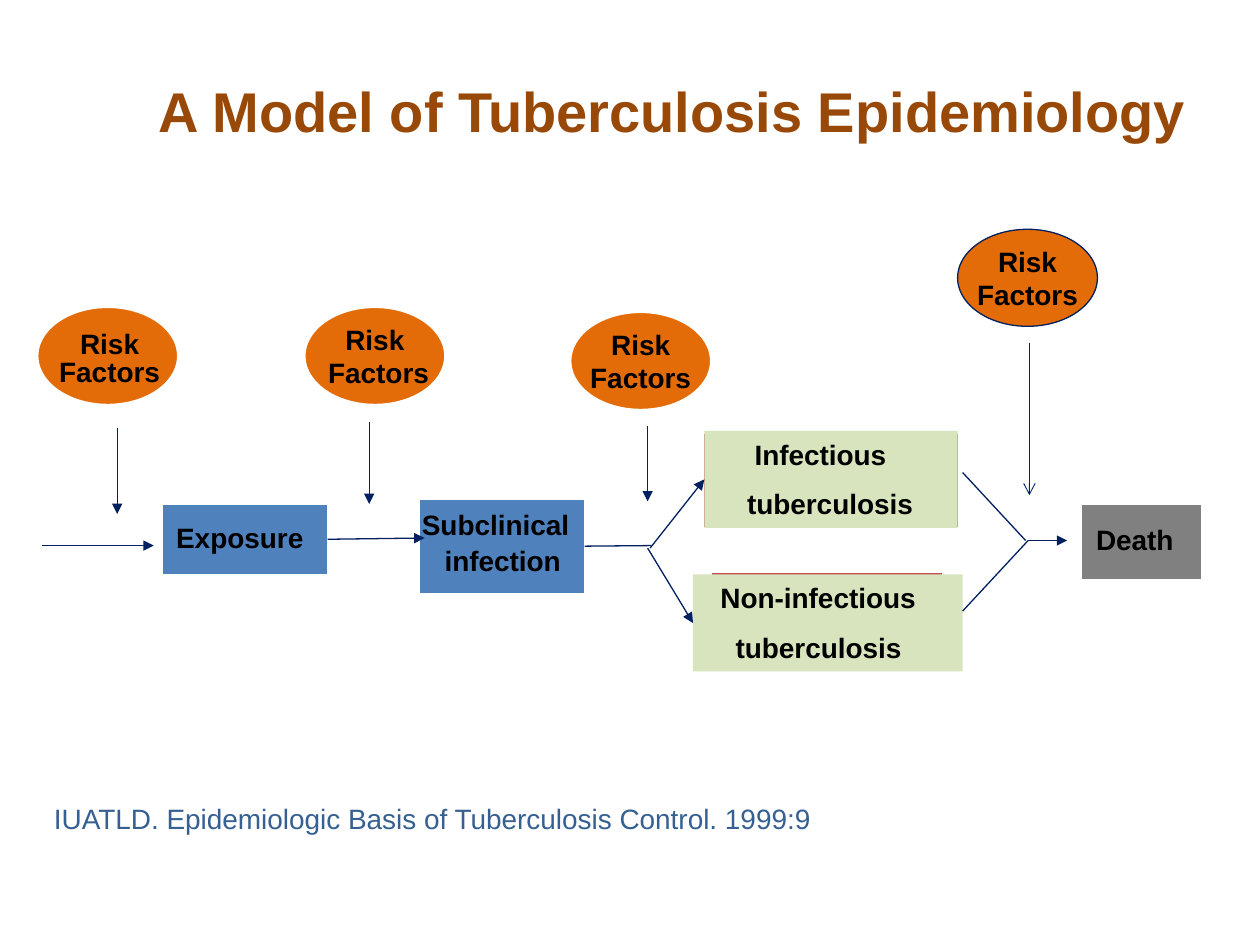
"""Build a one-slide flow diagram of tuberculosis epidemiology."""
import pptx
import pptx.dml.color
import pptx.enum.shapes
import pptx.enum.text
import pptx.oxml
import pptx.oxml.ns
import pptx.util

Inches = pptx.util.Inches
Pt = pptx.util.Pt
RGBColor = pptx.dml.color.RGBColor
SHAPE = pptx.enum.shapes.MSO_SHAPE
ALIGN = pptx.enum.text.PP_ALIGN
ANCHOR = pptx.enum.text.MSO_ANCHOR

BROWN = RGBColor(0x98, 0x48, 0x07)
ORANGE = RGBColor(0xE3, 0x6C, 0x09)
BLUE = RGBColor(0x4F, 0x81, 0xBD)
RED = RGBColor(0xC0, 0x50, 0x4D)
GREEN = RGBColor(0xD7, 0xE4, 0xBD)
GRAY = RGBColor(0x80, 0x80, 0x80)
NAVY = RGBColor(0x00, 0x20, 0x60)
CITATION = RGBColor(0x36, 0x60, 0x92)
WHITE = RGBColor(0xFF, 0xFF, 0xFF)
BLACK = RGBColor(0x00, 0x00, 0x00)


def add_block(s, kind, box, fill, line):
    sp = s.shapes.add_shape(kind, *map(Inches, box))
    sp.shadow.inherit = False
    sp.fill.solid()
    sp.fill.fore_color.rgb = fill
    if line is None:
        sp.line.fill.background()
    else:
        sp.line.color.rgb = line
        sp.line.width = Pt(0.75)
    return sp


def write_lines(sp, lines, align=ALIGN.LEFT, anchor=ANCHOR.TOP, wrap=True,
                spacing=None, before=0, color=BLACK, bold=True):
    tf = sp.text_frame
    tf.word_wrap = wrap
    tf.vertical_anchor = anchor
    for i, (text, indent) in enumerate(lines):
        p = tf.paragraphs[0] if i == 0 else tf.add_paragraph()
        p.text = text
        p.alignment = align
        p.line_spacing = spacing
        p.space_before = Pt(before if i else 0)
        p.font.name = "Arial"
        p.font.size = Pt(16)
        p.font.bold = bold
        p.font.color.rgb = color
        if indent:
            p._p.get_or_add_pPr().set("marL", str(Inches(indent)))


prs = pptx.Presentation()
prs.slide_width = Inches(10)
prs.slide_height = Inches(7.5)
s = prs.slides.add_slide(prs.slide_layouts[5])

title = s.shapes.title
title.left, title.top, title.width, title.height = map(Inches, (1.26, 0.5, 8.16, 0.75))
tf = title.text_frame
tf.margin_left = tf.margin_right = tf.margin_top = tf.margin_bottom = 0
tf.vertical_anchor = ANCHOR.MIDDLE
tf.word_wrap = True
p = tf.paragraphs[0]
p.text = "A Model of Tuberculosis Epidemiology"
p.alignment = ALIGN.CENTER
p.font.name = "Arial"
p.font.size = Pt(32)
p.font.bold = True
p.font.color.rgb = BROWN

exposure = add_block(s, SHAPE.RECTANGLE, (1.29, 4, 1.31, 0.56), BLUE, WHITE)
subclinical = add_block(s, SHAPE.RECTANGLE, (3.33, 3.96, 1.31, 0.75), BLUE, WHITE)
add_block(s, SHAPE.RECTANGLE, (5.58, 3.44, 2.03, 0.75), RED, WHITE)
add_block(s, SHAPE.RECTANGLE, (5.65, 4.54, 1.83, 0.77), RED, WHITE)
add_block(s, SHAPE.RECTANGLE, (8.58, 4, 0.96, 0.6), GRAY, WHITE)

infectious = add_block(s, SHAPE.RECTANGLE, (5.59, 3.42, 2.01, 0.77), GREEN, None)
write_lines(infectious, [("Infectious", 0.3), ("tuberculosis", 0.24)], before=9)
noninfectious = add_block(s, SHAPE.RECTANGLE, (5.5, 4.56, 2.14, 0.77), GREEN, None)
write_lines(noninfectious, [("Non-infectious", 0.12), ("tuberculosis", 0.24)], before=9)

for x, y, line, lines in [
    (0.3, 2.44, WHITE, []),
    (2.42, 2.44, WHITE, [("Risk", 0), ("Factors", 0.06)]),
    (4.53, 2.48, WHITE, [("Risk", 0), ("Factors", 0)]),
    (7.6, 1.82, NAVY, [("Risk", 0), ("Factors", 0)]),
]:
    sp = add_block(s, SHAPE.OVAL, (x, y, 1.11, 0.77), ORANGE, line)
    write_lines(sp, lines, ALIGN.CENTER, ANCHOR.MIDDLE, wrap=False)

for box, lines, style in [
    ((0.33, 2.58, 1.08, 0.56), [("Risk Factors", 0)],
     {"align": ALIGN.CENTER, "spacing": 0.85}),
    ((1.3, 4.08, 1.54, 0.37), [("Exposure", 0)], {}),
    ((3.25, 4.07, 1.39, 0.56), [("Subclinical", 0), ("infection", 0.18)],
     {"spacing": 0.6, "before": 9}),
    ((8.54, 4.1, 1.05, 0.37), [("Death", 0.06)], {}),
    ((0.33, 6.31, 6.58, 0.37),
     [("IUATLD. Epidemiologic Basis of Tuberculosis Control. 1999:9", 0)],
     {"color": CITATION, "bold": False}),
]:
    write_lines(s.shapes.add_textbox(*map(Inches, box)), lines, **style)

for points, width, head, start, end in [
    ((0.33, 4.33, 1.22, 4.33), 0.75, "triangle", None, None),
    ((0.93, 3.4, 0.93, 4.08), 0.75, "triangle", None, None),
    ((2.93, 3.35, 2.93, 4), 0.75, "triangle", None, None),
    ((5.14, 3.38, 5.14, 3.98), 0.75, "triangle", None, None),
    ((8.17, 2.72, 8.17, 3.93), 0.5, "arrow", None, None),
    ((2.6, 4.28, 3.37, 4.27), 0.75, "triangle", exposure, None),
    ((4.64, 4.33, 5.17, 4.33), 0.75, None, subclinical, None),
    ((5.16, 4.35, 5.59, 3.81), 0.75, "triangle", None, infectious),
    ((5.14, 4.35, 5.5, 4.94), 0.75, "triangle", None, noninfectious),
    ((7.64, 3.75, 8.14, 4.29), 0.75, None, None, None),
    ((7.64, 4.85, 8.16, 4.29), 0.75, None, None, None),
    ((8.16, 4.29, 8.47, 4.29), 0.75, "triangle", None, None),
]:
    line = s.shapes.add_connector(pptx.enum.shapes.MSO_CONNECTOR.STRAIGHT, *map(Inches, points))
    line.line.color.rgb = NAVY
    line.line.width = Pt(width)
    if start is not None:
        line.begin_connect(start, 3)
    if end is not None:
        line.end_connect(end, 1)
    if head:
        tail = pptx.oxml.parse_xml(
            f'<a:tailEnd {pptx.oxml.ns.nsdecls("a")} type="{head}"/>')
        line.line._get_or_add_ln().append(tail)
    line._element.spPr.append(
        pptx.oxml.parse_xml(f'<a:effectLst {pptx.oxml.ns.nsdecls("a")}/>'))

prs.save("out.pptx")
